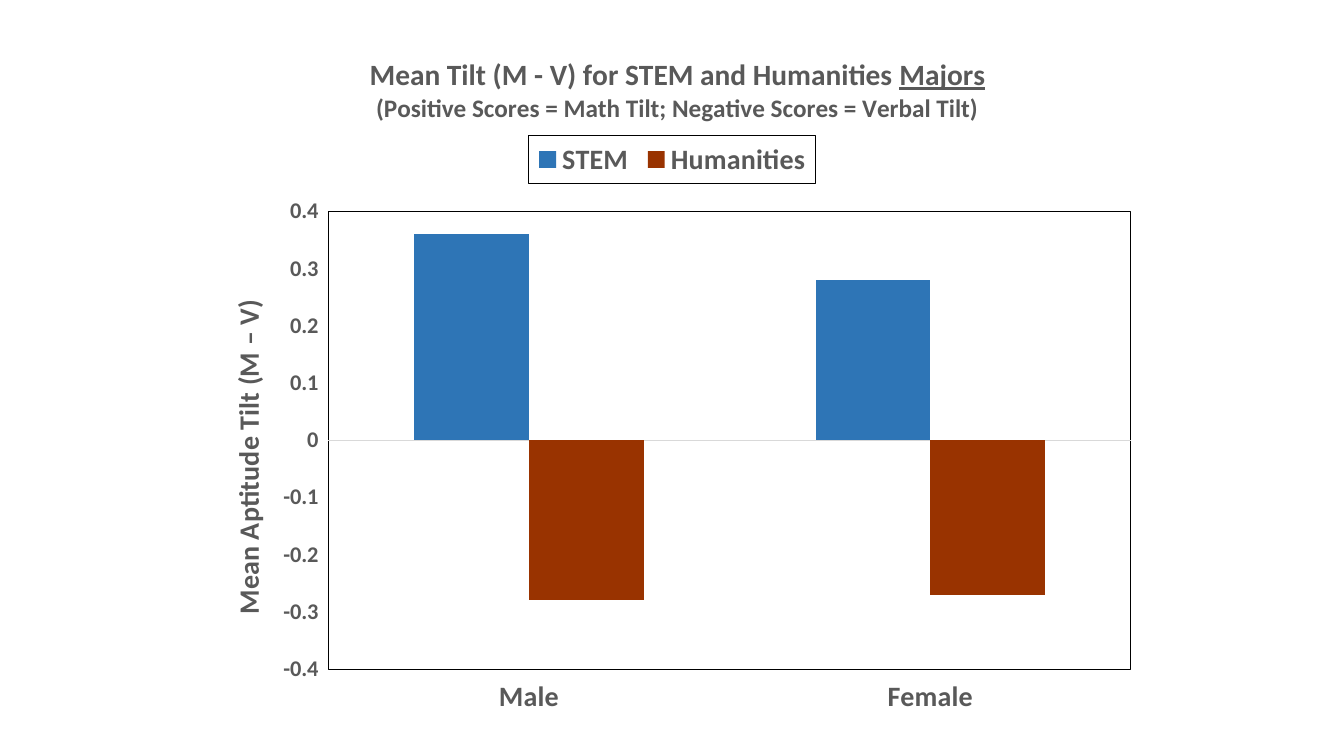
from dataclasses import dataclass

import pptx
import pptx.chart.data
import pptx.dml.color
import pptx.enum.chart
import pptx.oxml
import pptx.oxml.ns
import pptx.util

GREY = "595959"
FACE = "Calibri"


@dataclass
class Series:
    name: str
    vals: tuple[float, ...]
    fill: str


@dataclass
class Run:
    text: str
    size: float
    under: bool = False


BARS = [
    Series("STEM", (0.36, 0.28), "2E75B6"),
    Series("Humanities", (-0.28, -0.27), "993300"),
]
HEAD = [
    [Run("Mean Tilt (M - V) for STEM and Humanities ", 21), Run("Majors", 21, True)],
    [Run("(Positive Scores = Math Tilt; Negative Scores = Verbal Tilt)", 18)],
]
SIDE = [[Run("Mean Aptitude Tilt (M – V)", 20)]]


def color(code: str) -> pptx.dml.color.RGBColor:
    return pptx.dml.color.RGBColor.from_string(code)


def style(font, size: float, code: str = GREY, bold: bool = True) -> None:
    font.name = FACE
    font.size = pptx.util.Pt(size)
    font.bold = bold
    font.color.rgb = color(code)


def write(frame, lines: list[list[Run]]) -> None:
    for i, line in enumerate(lines):
        para = frame.paragraphs[0] if i == 0 else frame.add_paragraph()
        for item in line:
            run = para.add_run()
            run.text = item.text
            style(run.font, item.size)
            if item.under:
                run.font.underline = True


def place(node, x: float, y: float, w: float = 0, h: float = 0) -> None:
    inner = node.tag == pptx.oxml.ns.qn("c:plotArea")
    parts = '<c:layoutTarget val="inner"/>' if inner else ""
    parts += '<c:xMode val="edge"/><c:yMode val="edge"/>'
    spots = {"x": x, "y": y, "w": w, "h": h}
    parts += "".join(f'<c:{k} val="{v}"/>' for k, v in spots.items() if v)
    names = pptx.oxml.ns.nsdecls("c")
    box = pptx.oxml.parse_xml(
        f"<c:layout {names}><c:manualLayout>{parts}</c:manualLayout></c:layout>"
    )
    for old in node.findall(pptx.oxml.ns.qn("c:layout")):
        node.remove(old)
    if inner:
        node.insert(0, box)
    else:
        node.find(pptx.oxml.ns.qn("c:overlay")).addprevious(box)


def frame_line():
    names = pptx.oxml.ns.nsdecls("c", "a")
    return pptx.oxml.parse_xml(
        f'<c:spPr {names}><a:noFill/><a:ln w="9525"><a:solidFill>'
        '<a:srgbClr val="000000"/></a:solidFill></a:ln></c:spPr>'
    )


def add_bars(slide):
    data = pptx.chart.data.CategoryChartData()
    data.categories = ["Male", "Female"]
    for bar in BARS:
        data.add_series(bar.name, bar.vals)
    spot = [pptx.util.Pt(v) for v in (138.96, 22.32, 682.56, 495.36)]
    kind = pptx.enum.chart.XL_CHART_TYPE.COLUMN_CLUSTERED
    chart = slide.shapes.add_chart(kind, *spot, data).chart
    style(chart.font, 10, "000000", False)
    plot = chart.plots[0]
    plot.gap_width = 150
    plot.overlap = 0
    plot.vary_by_categories = False
    for item, bar in zip(plot.series, BARS):
        item.invert_if_negative = False
        item.format.fill.solid()
        item.format.fill.fore_color.rgb = color(bar.fill)
    return chart


def set_axes(chart) -> None:
    mark = pptx.enum.chart.XL_TICK_MARK
    base = chart.category_axis
    base.tick_label_position = pptx.enum.chart.XL_TICK_LABEL_POSITION.LOW
    base.major_tick_mark = mark.NONE
    base.format.line.color.rgb = color("D9D9D9")
    base.format.line.width = pptx.util.Pt(0.75)
    style(base.tick_labels.font, 20)

    scale = chart.value_axis
    scale.minimum_scale, scale.maximum_scale = -0.4, 0.4
    scale.major_unit = 0.1
    scale.has_major_gridlines = False
    scale.major_tick_mark = mark.OUTSIDE
    scale.format.line.fill.background()
    style(scale.tick_labels.font, 16)
    scale.tick_labels.number_format = "General"
    scale.tick_labels.number_format_is_linked = False
    write(scale.axis_title.text_frame, SIDE)
    place(scale.axis_title._element, 0.03, 0.38)


def set_frame(chart) -> None:
    chart.has_title = True
    write(chart.chart_title.text_frame, HEAD)
    chart.chart_title.include_in_layout = False
    place(chart.chart_title._element, 0.18, 0.03)

    chart.has_legend = True
    key = chart.legend
    key.position = pptx.enum.chart.XL_LEGEND_POSITION.TOP
    key.include_in_layout = False
    style(key.font, 20)
    place(key._element, 0.35, 0.15, 0.3, 0.07)
    key._element.find(pptx.oxml.ns.qn("c:txPr")).addprevious(frame_line())

    area = chart.plots[0]._element.getparent()
    place(area, 0.14, 0.26, 0.84, 0.66)
    area.append(frame_line())


def main() -> None:
    deck = pptx.Presentation()
    deck.slide_width = pptx.util.Pt(960)
    deck.slide_height = pptx.util.Pt(540)
    slide = deck.slides.add_slide(deck.slide_layouts[6])
    chart = add_bars(slide)
    set_axes(chart)
    set_frame(chart)
    deck.save("out.pptx")


if __name__ == "__main__":
    main()
